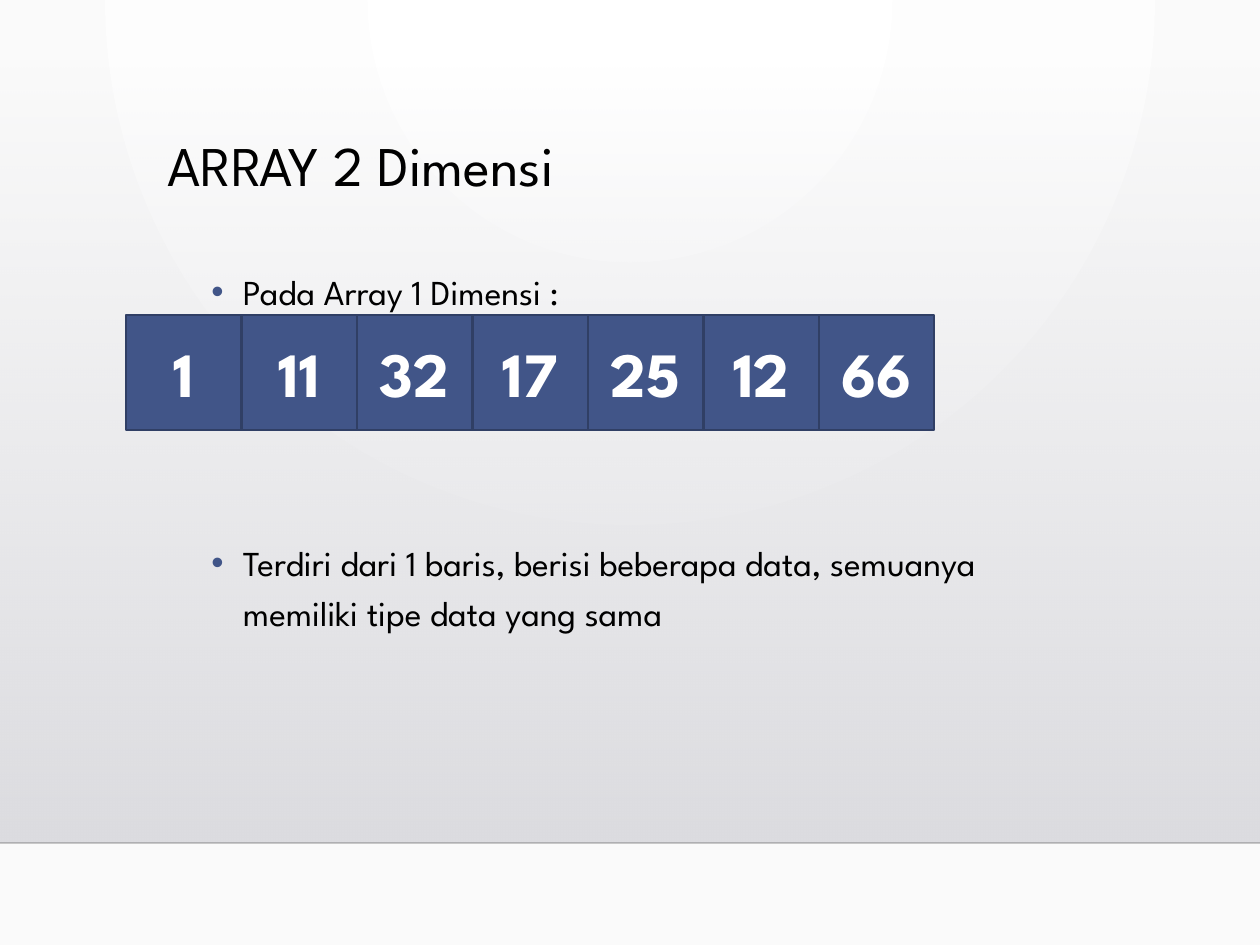
from lxml.etree import SubElement
from pptx import Presentation
from pptx.dml.color import RGBColor
from pptx.enum.shapes import MSO_CONNECTOR, MSO_SHAPE
from pptx.enum.text import MSO_ANCHOR, PP_ALIGN
from pptx.oxml.ns import qn
from pptx.util import Inches, Pt

COLORS = {
    "text": "000000", "cell": "415588", "cell_line": "303F65", "cell_text": "FFFFFF",
    "floor_line": "000001", "glow": "FFFFFF", "edge": "FAFAFA",
    "shade_top": "DCDCE0", "shade_bottom": "DEDEE2",
}
FONT = "League Spartan"
CELL_SIZE = 5.5 / 6


def color(name):
    return RGBColor.from_string(COLORS[name])


def child(parent, tag, **attributes):
    return SubElement(parent, qn(tag), {key: str(value) for key, value in attributes.items()})


class SlideBuilder:
    """Holds the text style and the current slide, and adds each kind of element."""

    def __init__(self, slide, font_name):
        self.slide = slide
        self.font_name = font_name

    def gradient(self, fill, stops):
        fill.gradient()
        gradient = fill._fill._gradFill
        for element in list(gradient):
            gradient.remove(element)
        stop_list = child(gradient, "a:gsLst")
        for position, (name, opacity) in zip((0, 100000), stops):
            stop = child(stop_list, "a:gs", pos=position)
            solid = child(stop, "a:srgbClr", val=COLORS[name])
            if opacity < 100:
                child(solid, "a:alpha", val=opacity * 1000)
        return gradient

    def background(self):
        gradient = self.gradient(self.slide.background.fill, [("glow", 100), ("edge", 100)])
        circle = child(gradient, "a:path", path="circle")
        child(circle, "a:fillToRect", l=43000, t=0, r=43000, b=100000)

    def rectangle(self, left, top, width, height):
        shape = self.slide.shapes.add_shape(
            MSO_SHAPE.RECTANGLE, Inches(left), Inches(top), Inches(width), Inches(height))
        shape.shadow.inherit = False
        return shape

    def shade(self, left, top, width, height):
        shape = self.rectangle(left, top, width, height)
        gradient = self.gradient(shape.fill, [("shade_top", 0), ("shade_bottom", 100)])
        child(gradient, "a:lin", ang=5400000, scaled=0)
        shape.line.fill.background()

    def floor_line(self, top, width):
        line = self.slide.shapes.add_connector(
            MSO_CONNECTOR.STRAIGHT, 0, Inches(top), Inches(width), Inches(top))
        line.line.color.rgb = color("floor_line")
        line.line.width = Pt(1)
        solid = line._element.spPr.find(".//" + qn("a:srgbClr"))
        child(solid, "a:alpha", val=20000)
        child(line._element.spPr, "a:effectLst")

    def add_text(self, paragraph, text, size, color_name, paragraph_format, bold=False):
        run = paragraph.add_run()
        run.text = text
        for key, value in paragraph_format.items():
            setattr(paragraph, key, value)
        font_format = {"name": self.font_name, "size": Pt(size), "bold": bold}
        for key, value in font_format.items():
            setattr(run.font, key, value)
        run.font.color.rgb = color(color_name)

    def bullet(self, paragraph):
        properties = paragraph._p.get_or_add_pPr()
        properties.set("marL", str(Inches(0.25)))
        properties.set("indent", str(Inches(-0.25)))
        bullet_color = child(properties, "a:buClr")
        child(bullet_color, "a:srgbClr", val=COLORS["cell"])
        child(properties, "a:buFont", typeface="Arial")
        child(properties, "a:buChar", char="•")

    def text_box(self, left, top, width, height, lines, size, line_spacing, bulleted=False):
        box = self.slide.shapes.add_textbox(
            Inches(left), Inches(top), Inches(width), Inches(height))
        frame = box.text_frame
        frame.word_wrap = True
        for index, (text, space_before) in enumerate(lines):
            paragraph = frame.add_paragraph() if index else frame.paragraphs[0]
            if bulleted:
                self.bullet(paragraph)
            paragraph_format = {"line_spacing": line_spacing, "space_before": Pt(space_before)}
            self.add_text(paragraph, text, size, "text", paragraph_format)

    def cell(self, left, top, text):
        shape = self.rectangle(left, top, CELL_SIZE, CELL_SIZE)
        shape.fill.solid()
        shape.fill.fore_color.rgb = color("cell")
        shape.line.color.rgb = color("cell_line")
        shape.line.width = Pt(1.25)
        shape.text_frame.vertical_anchor = MSO_ANCHOR.MIDDLE
        self.add_text(shape.text_frame.paragraphs[0], text, 36, "cell_text",
                      {"alignment": PP_ALIGN.CENTER}, bold=True)


def main():
    presentation = Presentation()
    presentation.slide_width = Inches(10)
    presentation.slide_height = Inches(7.5)
    slide = presentation.slides.add_slide(presentation.slide_layouts[6])
    builder = SlideBuilder(slide, FONT)

    builder.background()
    builder.shade(0, 0.51, 10, 6.18)
    builder.floor_line(6.69, 10)
    builder.text_box(1.23, 1.05, 7.19, 1.15, [("ARRAY 2 Dimensi", 0)], 32, 0.9)
    points = [
        ("Pada Array 1 Dimensi :", 0),
        ("Terdiri dari 1 baris, berisi beberapa data, semuanya memiliki tipe data yang sama", 126),
    ]
    builder.text_box(1.58, 2.03, 7.19, 3.77, points, 20, 1.2, bulleted=True)
    for index, value in enumerate((1, 11, 32, 17, 25, 12, 66)):
        builder.cell(1 + index * CELL_SIZE, 2.5, str(value))

    presentation.save("out.pptx")


if __name__ == "__main__":
    main()
